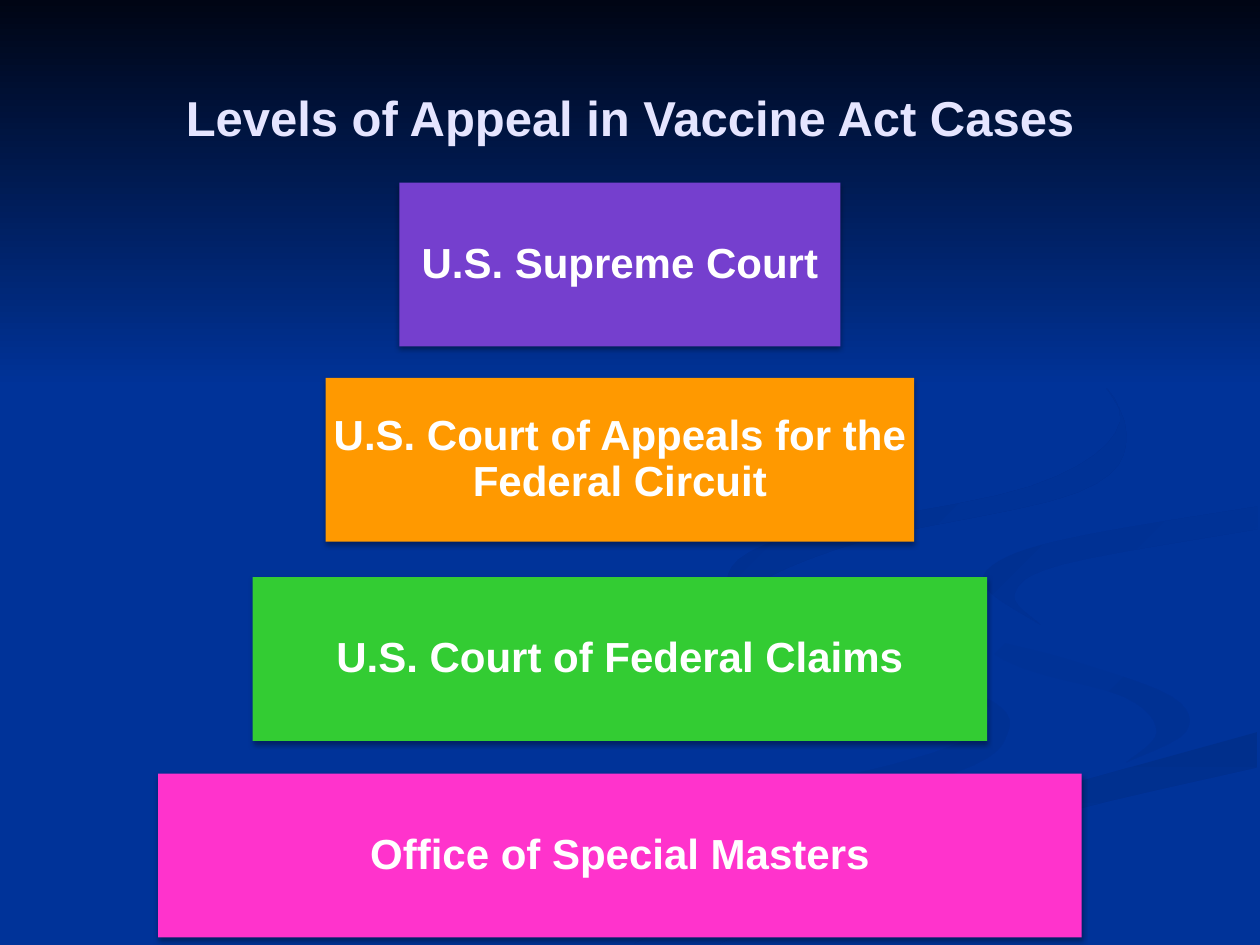
from lxml.etree import SubElement
from pptx import Presentation
from pptx.dml.color import RGBColor
from pptx.enum.shapes import MSO_SHAPE as SHAPE
from pptx.enum.text import MSO_ANCHOR as ANCHOR, PP_ALIGN as ALIGN
from pptx.oxml.ns import qn
from pptx.util import Inches, Pt

FONT = "Arial"
BLUE = "003399"
BOX_HEIGHT = 1.3
BOX_CENTER = 4.92
CURVE_STEPS = 6

# label, top, width, colour
COURTS = [
    ("U.S. Supreme Court", 1.45, 3.5, "753FCE"),
    ("U.S. Court of Appeals for the Federal Circuit", 3, 4.67, "FF9900"),
    ("U.S. Court of Federal Claims", 4.58, 5.83, "33CC33"),
    ("Office of Special Masters", 6.14, 7.33, "FF33CC"),
]

# first colour, last colour, clockwise angle, edge out, edge back
SWIRLS = [
    (BLUE, "003193", 0,
     [(5.75, 4.59), (6.02, 4.9), (6.82, 5.19), (7.81, 5.53), (8, 5.81),
      (7.56, 6.14), (5.64, 6.65), (3.61, 7.49)],
     [(3, 7.49), (4.99, 6.61), (7.39, 5.98), (7.86, 5.66), (7.41, 5.39),
      (6.02, 4.95), (5.75, 4.59)]),
    (BLUE, "003193", 45,
     [(7.24, 4.64), (7.58, 4.98), (8.5, 5.24), (9.3, 5.53), (9.41, 5.81),
      (8.94, 6.05)],
     [(8.94, 6.05), (9.18, 5.81), (8.92, 5.53), (7.97, 5.24), (7.24, 4.64)]),
    ("002F8C", BLUE, 90,
     [(5.03, 7.49), (6.3, 6.93), (7.64, 6.47), (9.98, 5.81)],
     [(9.98, 6.09), (8.21, 6.51), (6.7, 7.02), (5.71, 7.49)]),
    ("003091", BLUE, 45,
     [(9.98, 4.02), (8.65, 4.24), (7.99, 4.42), (7.81, 4.65), (8.26, 4.96)],
     [(8.26, 4.96), (8.05, 4.72), (8.43, 4.48), (9.98, 4.2)]),
    ("002F8E", BLUE, 45,
     [(7.62, 2.33), (8.54, 2.83), (8.94, 3.44), (8.55, 3.91), (6.83, 4.3),
      (5.93, 4.7), (6.22, 5)],
     [(6.22, 5), (5.77, 4.62), (6.25, 4.26), (8.18, 3.86), (8.89, 3.35),
      (8.46, 2.79), (7.62, 2.33)]),
]


def rgb(color):
    return RGBColor.from_string(color)


def smooth(edge):
    """Points of a Catmull-Rom curve through the points of the edge."""
    knots = [edge[0], *edge, edge[-1]]
    points = [edge[0]]
    for quad in zip(knots, knots[1:], knots[2:], knots[3:]):
        for step in range(1, CURVE_STEPS + 1):
            t = step / CURVE_STEPS
            points.append(tuple(
                b + t / 2 * (c - a + t * (2 * a - 5 * b + 4 * c - d
                                          + t * (3 * (b - c) + d - a)))
                for a, b, c, d in zip(*quad)))
    return points


def fill_gradient(sp, first, last, angle):
    """Fill without outline or shadow; the angle runs clockwise."""
    sp.fill.gradient()
    sp.fill.gradient_angle = (360 - angle) % 360
    for stop, color in zip(sp.fill.gradient_stops, (first, last)):
        stop.color.rgb = rgb(color)
    sp.line.fill.background()
    sp.shadow.inherit = False


def add_swirl(slide, first, last, angle, edge_out, edge_back):
    points = [(Inches(x), Inches(y))
              for x, y in smooth(edge_out) + smooth(edge_back)]
    builder = slide.shapes.build_freeform(*points[0])
    builder.add_line_segments(points[1:], close=True)
    fill_gradient(builder.convert_to_shape(), first, last, angle)


def add_sky(slide):
    sp = slide.shapes.add_shape(SHAPE.RECTANGLE, 0, 0, Inches(10), Inches(3.08))
    fill_gradient(sp, "000514", BLUE, 90)


def write_text(sp, text, size, color, spacing=1):
    tf = sp.text_frame
    tf.word_wrap = True
    tf.vertical_anchor = ANCHOR.MIDDLE
    p = tf.paragraphs[0]
    p.alignment = ALIGN.CENTER
    p.line_spacing = spacing
    r = p.add_run()
    r.text = text
    for name, value in {"name": FONT, "size": Pt(size), "bold": True}.items():
        setattr(r.font, name, value)
    r.font.color.rgb = rgb(color)


def add_title(slide, text):
    sp = slide.shapes.title
    sp.left, sp.top, sp.width, sp.height = map(Inches, (0.5, 0.3, 9, 1.25))
    write_text(sp, text, 28, "E5E5FF")
    slide.shapes._spTree.append(sp._element)  # in front of the background


def add_drop_shadow(sp):
    sp.shadow.inherit = False
    effects = sp._element.spPr.find(qn("a:effectLst"))
    shadow = SubElement(effects, qn("a:outerShdw"), blurRad=str(Pt(3.1)),
                        dist=str(Pt(1.8)), dir="5400000", rotWithShape="0")
    color = SubElement(shadow, qn("a:srgbClr"), val="000000")
    SubElement(color, qn("a:alpha"), val="35000")


def add_court(slide, label, top, width, color):
    sp = slide.shapes.add_shape(
        SHAPE.RECTANGLE, Inches(BOX_CENTER - width / 2), Inches(top),
        Inches(width), Inches(BOX_HEIGHT))
    sp.fill.solid()
    sp.fill.fore_color.rgb = rgb(color)
    sp.line.fill.background()
    add_drop_shadow(sp)
    for side in ("left", "top", "right", "bottom"):
        setattr(sp.text_frame, f"margin_{side}", Inches(0.05))
    write_text(sp, label, 24, "FFFFFF", 0.9)


def main():
    prs = Presentation()
    prs.slide_width, prs.slide_height = Inches(10), Inches(7.5)
    slide = prs.slides.add_slide(prs.slide_layouts[5])
    slide.background.fill.solid()
    slide.background.fill.fore_color.rgb = rgb(BLUE)
    for swirl in SWIRLS:
        add_swirl(slide, *swirl)
    add_sky(slide)
    add_title(slide, "Levels of Appeal in Vaccine Act Cases")
    for court in COURTS:
        add_court(slide, *court)
    prs.save("out.pptx")


if __name__ == "__main__":
    main()
